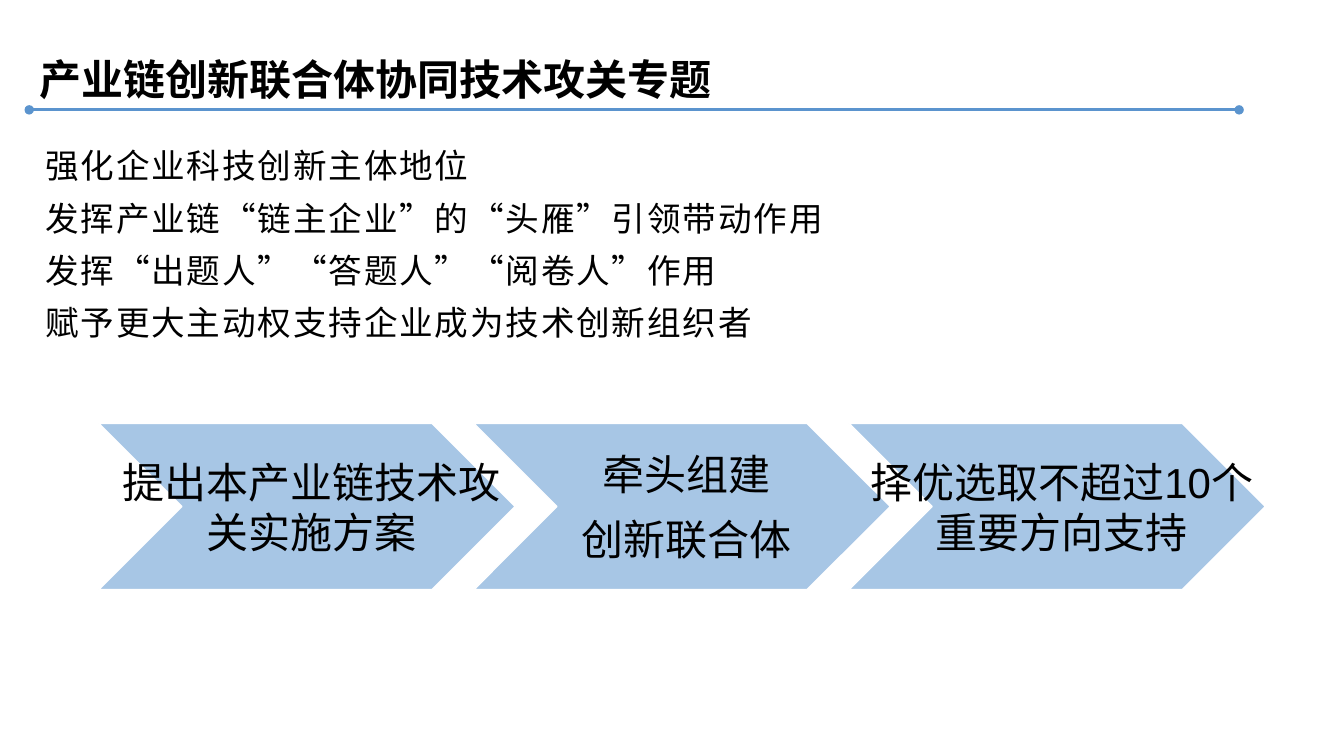
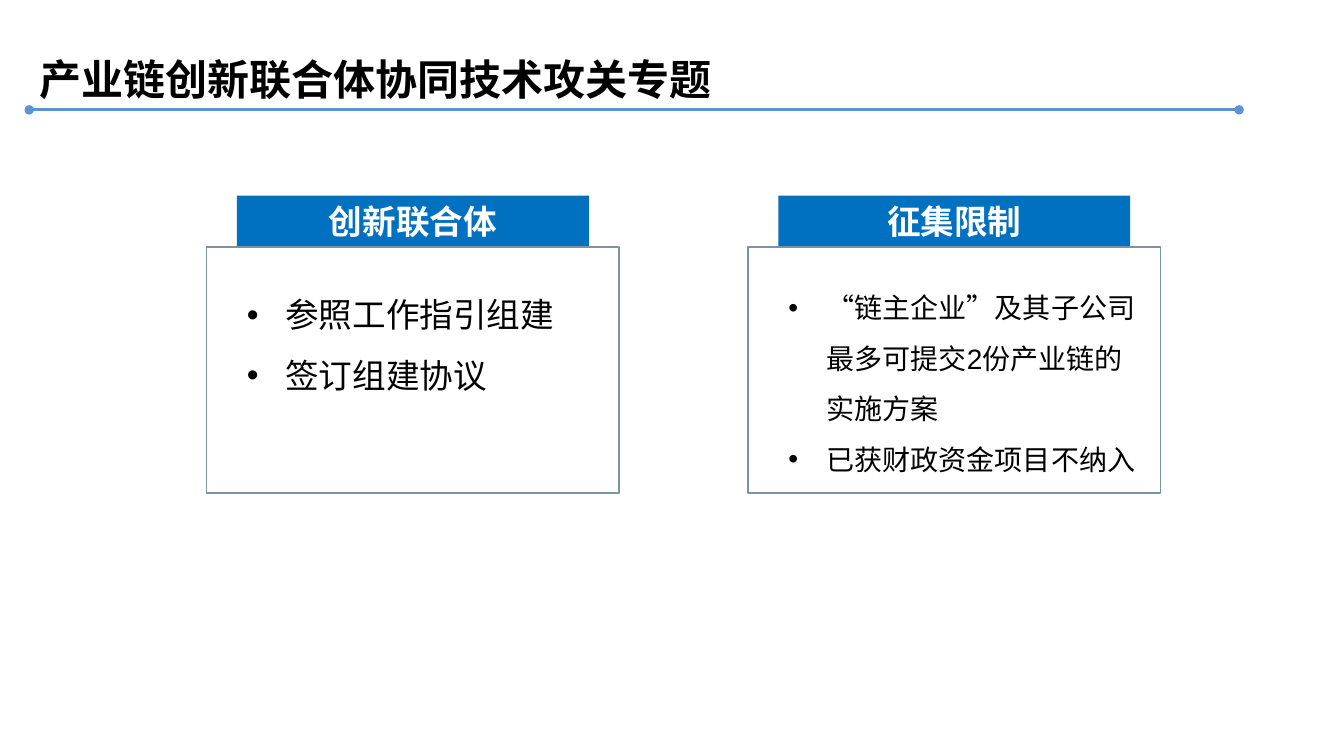
import pptx
import pptx.util
import pptx.dml.color
import pptx.enum.lang
import pptx.enum.shapes
import pptx.enum.text
import pptx.oxml
import pptx.oxml.ns

PX = 9144  # 100 px to the inch
LATIN, CHINESE = "Arial", "Noto Sans CJK SC"
BLACK = pptx.dml.color.RGBColor(0x00, 0x00, 0x00)
WHITE = pptx.dml.color.RGBColor(0xFF, 0xFF, 0xFF)
RULE_BLUE = pptx.dml.color.RGBColor(0x5B, 0x94, 0xCE)
STEP_BLUE = pptx.dml.color.RGBColor(0xA7, 0xC6, 0xE5)
BANNER_BLUE = pptx.dml.color.RGBColor(0x00, 0x70, 0xC0)
PANEL_EDGE = pptx.dml.color.RGBColor(0x7C, 0x92, 0xA9)

ALIGN = pptx.enum.text.PP_ALIGN
ANCHOR = pptx.enum.text.MSO_ANCHOR
SHAPE = pptx.enum.shapes.MSO_SHAPE
TITLE = "产业链创新联合体协同技术攻关专题"


def write_text(frame, lines, size, color=BLACK, font=LATIN, bold=False, anchor=ANCHOR.TOP,
               margins=(10, 5, 10, 5), para_format=None, tracking=0, bullet_indent=0):
    left, top, right, bottom = (margin * PX for margin in margins)
    frame_format = {
        "word_wrap": True, "auto_size": pptx.enum.text.MSO_AUTO_SIZE.NONE,
        "vertical_anchor": anchor, "margin_left": left, "margin_top": top,
        "margin_right": right, "margin_bottom": bottom,
    }
    font_format = {
        "size": pptx.util.Pt(size), "bold": bold, "name": font,
        "language_id": pptx.enum.lang.MSO_LANGUAGE_ID.SIMPLIFIED_CHINESE,
    }
    for name, value in frame_format.items():
        setattr(frame, name, value)
    for number, line in enumerate(lines):
        para = frame.add_paragraph() if number else frame.paragraphs[0]
        for name, value in (para_format or {}).items():
            setattr(para, name, value)
        if bullet_indent:
            properties = para._p.get_or_add_pPr()
            properties.set("marL", str(bullet_indent * PX))
            properties.set("indent", str(-bullet_indent * PX))
            for tag, key, value in (("a:buFont", "typeface", LATIN), ("a:buChar", "char", "•")):
                element = pptx.oxml.ns.qn(tag)
                properties.append(properties.makeelement(element, {key: value}))
        span = para.add_run()
        span.text = line
        for name, value in font_format.items():
            setattr(span.font, name, value)
        span.font.color.rgb = color
        properties = span._r.get_or_add_rPr()
        if tracking:
            properties.set("spc", str(tracking))
        east_asian = pptx.oxml.ns.qn("a:ea")
        properties.append(properties.makeelement(east_asian, {"typeface": CHINESE}))


def add_box(page, kind, at, fill, edge=None):
    box = page.shapes.add_shape(kind, *(length * PX for length in at))
    box.shadow.inherit = False
    box.fill.solid()
    box.fill.fore_color.rgb = fill
    if edge is None:
        box.line.fill.background()
    else:
        box.line.color.rgb = edge
        box.line.width = pptx.util.Pt(1)
    return box


deck = pptx.Presentation()
deck.slide_width, deck.slide_height = 1333 * PX, 750 * PX

# Shared title and rule
pages = []
for _ in range(2):
    page = deck.slides.add_slide(deck.slide_layouts[5])
    title = page.shapes.title
    title_place = {"left": 29, "top": 23, "width": 1069, "height": 86}
    for name, value in title_place.items():
        setattr(title, name, value * PX)
    write_text(title.text_frame, [TITLE], 30, bold=True,
               para_format={"alignment": ALIGN.LEFT, "line_spacing": 1.5})

    rule = page.shapes.add_connector(pptx.enum.shapes.MSO_CONNECTOR.STRAIGHT,
                                     29 * PX, 109 * PX, 1229 * PX, 109 * PX)
    rule.line.color.rgb = RULE_BLUE
    rule.line.width = pptx.util.Pt(2.25)
    line_xml = rule.line._get_or_add_ln()
    for tag in ("a:headEnd", "a:tailEnd"):
        line_xml.append(line_xml.makeelement(pptx.oxml.ns.qn(tag), {"type": "oval"}))
    shape_xml = rule._element.spPr
    shape_xml.append(shape_xml.makeelement(pptx.oxml.ns.qn("a:effectLst"), {}))
    pages.append(page)
steps_page, rules_page = pages

# Slide 1: key points
points = [
    "强化企业科技创新主体地位",
    "发挥产业链“链主企业”的“头雁”引领带动作用",
    "发挥“出题人”“答题人”“阅卷人”作用",
    "赋予更大主动权支持企业成为技术创新组织者",
]
points_box = steps_page.shapes.add_textbox(35 * PX, 127 * PX, 1175 * PX, 377 * PX)
write_text(points_box.text_frame, points, 24, font=CHINESE, tracking=130,
           para_format={"line_spacing": 1.3})

# Slide 1: chevron steps, with text wider than the chevron's own text area
steps = [
    ["提出本产业链技术攻关实施方案"],
    ["牵头组建", "创新联合体"],
    ["择优选取不超过10个重要方向支持"],
]
for index, lines in enumerate(steps):
    place = (98 + 372 * index, 420, 413, 165)
    add_box(steps_page, SHAPE.CHEVRON, place, STEP_BLUE, WHITE)
    label = steps_page.shapes.add_textbox(*(length * PX for length in place))
    write_text(label.text_frame, lines, 30, anchor=ANCHOR.MIDDLE, margins=(13, 4, 4, 4),
               para_format={"alignment": ALIGN.CENTER, "space_after": pptx.util.Pt(10.5)})

# Slide 2: panels with banners
panels = [
    ("创新联合体", ["参照工作指引组建", "签订组建协议"], 24, CHINESE),
    ("征集限制", ["“链主企业”及其子公司最多可提交2份产业链的实施方案",
              "已获财政资金项目不纳入"], 20, LATIN),
]
for index, (heading, items, size, font) in enumerate(panels):
    left = 205 + 537 * index
    add_box(rules_page, SHAPE.RECTANGLE, (left, 245, 409, 244), WHITE, PANEL_EDGE)
    body = rules_page.shapes.add_textbox((left + 30) * PX, 267 * PX, 371 * PX, 212 * PX)
    write_text(body.text_frame, items, size, font=font, bullet_indent=38,
               para_format={"line_spacing": 1.5})
    banner = add_box(rules_page, SHAPE.RECTANGLE, (left + 30, 194, 349, 50), BANNER_BLUE)
    write_text(banner.text_frame, [heading], 24, WHITE, bold=True, anchor=ANCHOR.MIDDLE,
               para_format={"alignment": ALIGN.CENTER})

deck.save("out.pptx")
